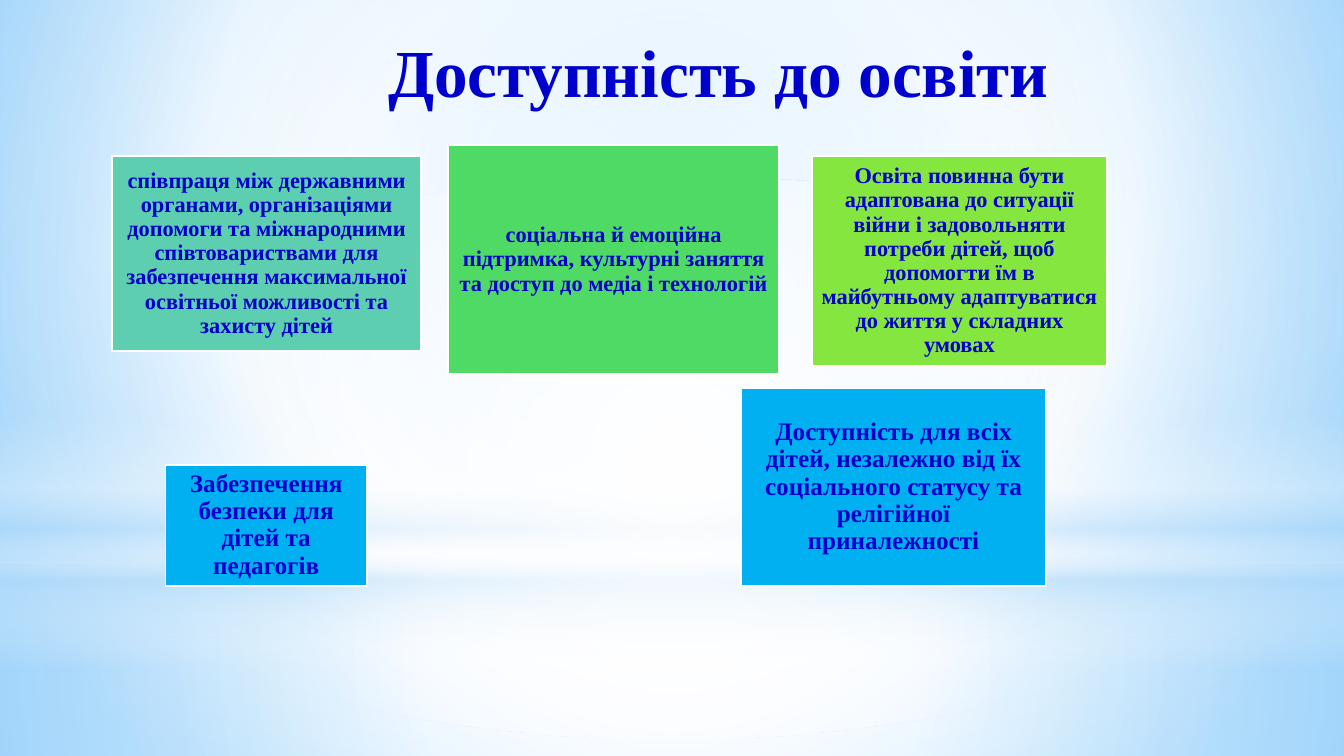
from dataclasses import dataclass

from lxml import etree
from pptx import Presentation
from pptx.dml.color import RGBColor
from pptx.enum.shapes import MSO_SHAPE
from pptx.enum.text import MSO_ANCHOR, PP_ALIGN
from pptx.oxml.ns import nsdecls, qn
from pptx.oxml import parse_xml
from pptx.util import Cm, Pt

RECT, OVAL = MSO_SHAPE.RECTANGLE, MSO_SHAPE.OVAL
TOP, MIDDLE = MSO_ANCHOR.TOP, MSO_ANCHOR.MIDDLE
CENTER = PP_ALIGN.CENTER


@dataclass(frozen=True)
class Theme:
    font: str = "Times New Roman"
    ink: str = "0000CC"
    white: str = "FFFFFF"
    haze: str = "B4DCFA"
    sky: str = "9ED5FF"
    deep_sky: str = "5BB9FF"
    teal: str = "5DCEAF"
    green: str = "4EDA64"
    lime: str = "86E640"
    blue: str = "00B0F0"
    title_size: int = 48
    large_size: int = 18
    small_size: int = 16
    line_width: float = 1.25
    inset: float = 0.18


THEME = Theme()
WIDTH, HEIGHT = 33.87, 19.05
MIDPOINT = (50, 50, 50, 50)

# Background layers: preset, top, height, stops (position, colour, opacity), focus
LAYERS = [
    (RECT, 14.17, 4.88, [(0, THEME.white, 91), (37, THEME.white, 76),
                         (100, THEME.haze, 79)], MIDPOINT),
    (RECT, 0, 14.17, [(0, THEME.white, 89), (48, THEME.white, 62),
                      (100, THEME.haze, 79)], MIDPOINT),
    (RECT, 10.46, 6.35, [(0, THEME.white, 0), (29, THEME.white, 30),
                         (45, THEME.haze, 40), (55, THEME.white, 26),
                         (65, THEME.haze, 60), (100, THEME.white, 0)], None),
    (OVAL, 4.45, 14.17, [(0, THEME.white, 100), (56, THEME.white, 0)], MIDPOINT),
]

# Cards: left, top, width, height, fill, type size, text
CARDS = [
    (2.82, 3.94, 7.8, 4.9, THEME.teal, THEME.small_size,
     "співпраця між державними органами, організаціями допомоги та міжнародними "
     "співтовариствами для забезпечення максимальної освітньої можливості та "
     "захисту дітей"),
    (11.3, 3.66, 8.33, 5.77, THEME.green, THEME.small_size,
     "соціальна й емоційна підтримка, культурні заняття та доступ до медіа "
     "і технологій"),
    (20.47, 3.94, 7.42, 5.28, THEME.lime, THEME.small_size,
     "Освіта повинна бути адаптована до ситуації війни і задовольняти потреби "
     "дітей, щоб допомогти їм в майбутньому адаптуватися до життя у складних "
     "умовах"),
    (4.17, 11.71, 5.08, 3.05, THEME.blue, THEME.large_size,
     "Забезпечення безпеки для дітей та педагогів"),
    (18.67, 9.78, 7.7, 4.98, THEME.blue, THEME.large_size,
     "Доступність для всіх дітей, незалежно від їх соціального статусу та "
     "релігійної приналежності"),
]


def set_gradient(fill, element, stops, focus=None):
    """Fill with a circular gradient around focus, or a vertical one without it."""
    fill.solid()
    solid = element.find(".//" + qn("a:solidFill"))
    grad = parse_xml(f'<a:gradFill {nsdecls("a")} rotWithShape="1"><a:gsLst/></a:gradFill>')
    for position, color, opacity in stops:
        gs = etree.SubElement(grad[0], qn("a:gs"), pos=str(position * 1000))
        clr = etree.SubElement(gs, qn("a:srgbClr"), val=color)
        if opacity < 100:
            etree.SubElement(clr, qn("a:alpha"), val=str(opacity * 1000))
    if focus:
        path = etree.SubElement(grad, qn("a:path"), path="circle")
        edges = {side: str(v * 1000) for side, v in zip("ltrb", focus)}
        etree.SubElement(path, qn("a:fillToRect"), **edges)
    else:
        etree.SubElement(grad, qn("a:lin"), ang="5400000", scaled="0")
    solid.getparent().replace(solid, grad)


def add_layer(slide, preset, top, height, stops, focus):
    sp = slide.shapes.add_shape(preset, 0, Cm(top), Cm(WIDTH), Cm(height))
    sp.shadow.inherit = False
    sp.line.fill.background()
    set_gradient(sp.fill, sp.element, stops, focus)


def write_text(sp, text, size, **frame_format):
    tf = sp.text_frame
    frame = {"word_wrap": True, **frame_format}
    for name, value in frame.items():
        setattr(tf, name, value)
    p = tf.paragraphs[0]
    p.alignment = CENTER
    r = p.add_run()
    r.text = text
    for name, value in {"name": THEME.font, "size": Pt(size), "bold": True}.items():
        setattr(r.font, name, value)
    r.font.color.rgb = RGBColor.from_string(THEME.ink)
    return p


def add_title(slide, text):
    sp = slide.shapes.add_textbox(Cm(5.84), Cm(0.41), Cm(24.54), Cm(10))
    write_text(sp, text, THEME.title_size, vertical_anchor=TOP, margin_top=Cm(0.36))


def add_card(slide, left, top, width, height, color, size, text):
    sp = slide.shapes.add_shape(RECT, Cm(left), Cm(top), Cm(width), Cm(height))
    sp.shadow.inherit = False
    sp.fill.solid()
    sp.fill.fore_color.rgb = RGBColor.from_string(color)
    sp.line.color.rgb = RGBColor.from_string(THEME.white)
    sp.line.width = Pt(THEME.line_width)
    margins = {f"margin_{side}": Cm(THEME.inset)
               for side in ("left", "top", "right", "bottom")}
    p = write_text(sp, text, size, vertical_anchor=MIDDLE, **margins)
    p.line_spacing = 0.9


def main():
    prs = Presentation()
    prs.slide_width, prs.slide_height = Cm(WIDTH), Cm(HEIGHT)
    slide = prs.slides.add_slide(prs.slide_layouts[6])

    # Background
    set_gradient(slide.background.fill, slide.element,
                 [(0, THEME.sky, 100), (60, THEME.white, 100),
                  (100, THEME.deep_sky, 100)], (20, 10, 20, 60))
    for layer in LAYERS:
        add_layer(slide, *layer)

    # Content
    add_title(slide, "Доступність до освіти")
    for card in CARDS:
        add_card(slide, *card)

    prs.save("out.pptx")


if __name__ == "__main__":
    main()
